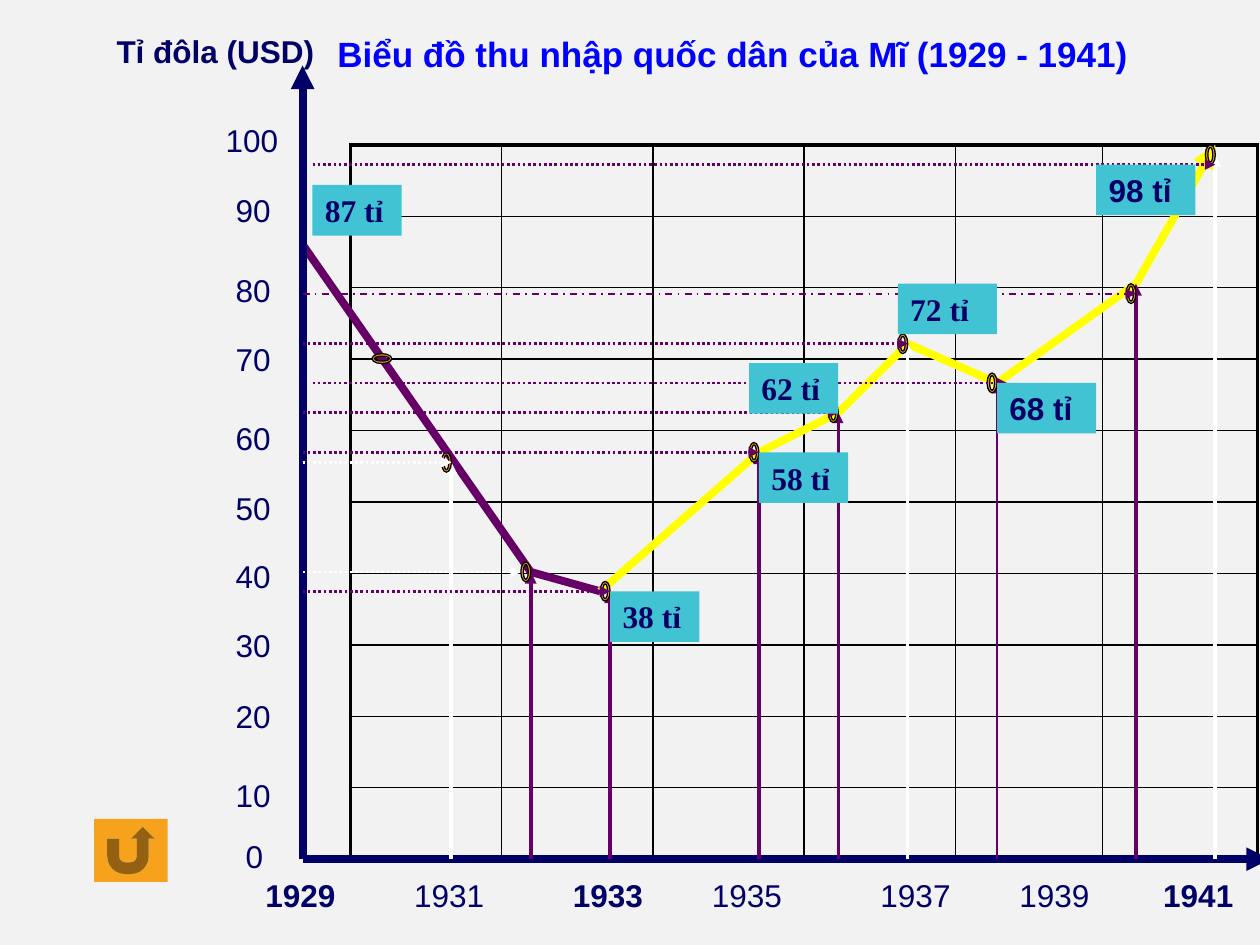
"""Build the slide with the line diagram of United States national income, 1929-1941."""
from itertools import pairwise

from lxml import etree
from pptx import Presentation
from pptx import util as u
from pptx.dml.color import RGBColor
from pptx.enum import dml, shapes, text
from pptx.oxml import ns

NAVY = RGBColor(0x00, 0x00, 0x66)
BLUE = RGBColor(0x00, 0x00, 0xFF)
PURPLE = RGBColor(0x66, 0x00, 0x66)
YELLOW = RGBColor(0xFF, 0xFF, 0x00)
WHITE = RGBColor(0xFF, 0xFF, 0xFF)
BLACK = RGBColor(0x00, 0x00, 0x00)
ORANGE = RGBColor(0xF6, 0xA2, 0x1D)
TEAL = RGBColor(0x42, 0xC3, 0xD4)
PAPER = RGBColor(0xF2, 0xF2, 0xF2)

SERIF = "Times New Roman"
ORIGIN_X, BASE_Y = 6.1, 17.32
LABEL_HEIGHT = 1.02
DOTS = dml.MSO_LINE.ROUND_DOT
DASH_DOT = dml.MSO_LINE.DASH_DOT

INCOME = [(6.1, 4.93), (10.7, 11.53), (12.1, 11.92), (15.3, 9.12), (16.9, 8.32),
          (18.3, 6.93), (20.1, 7.72), (22.9, 5.72), (24.5, 2.92)]
FALLING_PARTS = 2

# x, top of the drop line, colour, width of the drop line
DROPS = [(9.1, 9.32, WHITE, 2.25), (10.7, 11.53, PURPLE, 2.25),
         (12.3, 11.92, PURPLE, 2.25), (15.3, 9.12, PURPLE, 2.25),
         (16.9, 8.32, PURPLE, 1.5), (18.3, 6.93, WHITE, 1.5),
         (20.1, 7.72, PURPLE, 1.5), (22.9, 5.72, PURPLE, 2.25),
         (24.5, 3.12, WHITE, 2.25)]
RING_Y = {22.9: 5.92}

# left, right, y, colour, width, dash
GUIDES = [(6.3, 24.5, 3.32, PURPLE, 1.5, DOTS), (6.1, 18.3, 6.93, PURPLE, 1.5, DOTS),
          (6.1, 16.9, 8.32, PURPLE, 1.5, DOTS), (6.3, 20.3, 7.72, PURPLE, 1.5, DOTS),
          (6.1, 22.9, 5.92, PURPLE, 1, DASH_DOT), (6.1, 15.3, 9.12, PURPLE, 1.5, DOTS),
          (6.1, 9.1, 9.32, WHITE, 1.5, DOTS), (6.1, 10.5, 11.53, WHITE, 1.5, DOTS),
          (6.1, 12.3, 11.92, PURPLE, 1.5, DOTS)]

YEARS = [(1929, 5.1, True), (1931, 8.1, False), (1933, 11.3, True), (1935, 14.1, False),
         (1937, 17.5, False), (1939, 20.3, False), (1941, 23.2, True)]
SCALE_TOPS = [16.74, 15.52, 13.92, 12.5, 11.1, 9.73, 8.33, 6.73, 5.33, 3.73, 2.31]

TAGS = [("38 tỉ", 12.3, 11.92, 1.8, SERIF), ("58 tỉ", 15.3, 9.12, 1.8, SERIF),
        ("62 tỉ", 15.1, 7.32, 1.8, SERIF), ("68 tỉ", 20.1, 7.72, 2, "Arial"),
        ("72 tỉ", 18.1, 5.72, 2, SERIF), ("98 tỉ", 22.1, 3.32, 2, "Arial"),
        ("87 tỉ", 6.3, 3.73, 1.8, SERIF)]


def write(frame, words, *, size=18, font="Arial", color=NAVY, bold=False):
    """Put one left-aligned run of formatted text into a frame."""
    frame.word_wrap = True
    frame.vertical_anchor = text.MSO_ANCHOR.TOP
    paragraph = frame.paragraphs[0]
    paragraph.alignment = text.PP_ALIGN.LEFT
    run = paragraph.add_run()
    run.text = words
    run.font.size = u.Pt(size)
    run.font.name = font
    run.font.bold = bold
    run.font.color.rgb = color


def add_label(slide, words, left, top, width, **style):
    """Add a text box with one line of text."""
    box = slide.shapes.add_textbox(u.Cm(left), u.Cm(top), u.Cm(width), u.Cm(LABEL_HEIGHT))
    write(box.text_frame, words, **style)


def add_line(slide, start, end, color, width, *, arrow=False, dash=None):
    """Add a straight line, with an arrowhead at its end if wanted."""
    connector = slide.shapes.add_connector(
        shapes.MSO_CONNECTOR.STRAIGHT, *(u.Cm(v) for v in (*start, *end)))
    line = connector.line
    line.color.rgb = color
    line.width = u.Pt(width)
    if dash:
        line.dash_style = dash
    if arrow:
        etree.SubElement(line._get_or_add_ln(), ns.qn("a:tailEnd"), type="triangle")
    etree.SubElement(connector._element.spPr, ns.qn("a:effectLst"))


def add_figure(slide, preset, left, top, width, height, fill, *, outline=None):
    """Add a filled preset shape and return it."""
    figure = slide.shapes.add_shape(preset, *(u.Cm(v) for v in (left, top, width, height)))
    figure.shadow.inherit = False
    figure.fill.solid()
    figure.fill.fore_color.rgb = fill
    if outline is None:
        figure.line.fill.background()
    else:
        figure.line.color.rgb = outline
        figure.line.width = u.Pt(0.75)
    return figure


def set_border(cell, side, width):
    """Draw one black border of a table cell."""
    border = etree.SubElement(cell._tc.get_or_add_tcPr(), ns.qn(f"a:{side}"),
                              w=str(int(u.Pt(width))))
    fill = etree.SubElement(border, ns.qn("a:solidFill"))
    etree.SubElement(fill, ns.qn("a:srgbClr"), val=str(BLACK))


def add_grid(slide):
    """Add the empty table behind the diagram, with a heavier outer border."""
    widths, row_count = [3.05, 3.05, 3.05, 3.05, 2.97, 3.12], 10
    height = u.Cm(14.4)
    table = slide.shapes.add_table(row_count, len(widths), u.Cm(7.06), u.Cm(2.92),
                                   u.Cm(sum(widths)), height).table
    table.first_row = table.horz_banding = False
    for column, width in zip(table.columns, widths):
        column.width = u.Cm(width)
    for r, row in enumerate(table.rows):
        row.height = height // row_count
        for c, cell in enumerate(row.cells):
            outer = {"lnL": c == 0, "lnR": c == len(widths) - 1,
                     "lnT": r == 0, "lnB": r == row_count - 1}
            for side, is_outer in outer.items():
                set_border(cell, side, 2.25 if is_outer else 1)
            cell.fill.background()


def add_curve_and_axes(slide):
    """Add the income curve and the two axes."""
    for part, (start, end) in enumerate(pairwise(INCOME)):
        add_line(slide, start, end, PURPLE if part < FALLING_PARTS else YELLOW, 4.5,
                 arrow=end == INCOME[-1])
    for tip in ((ORIGIN_X, 1.32), (25.6, BASE_Y)):
        add_line(slide, (ORIGIN_X, BASE_Y), tip, NAVY, 4.5, arrow=True)


def add_scales(slide):
    """Add the years, the income scale and its unit."""
    for year, left, bold in YEARS:
        add_label(slide, str(year), left, 17.53, 2.2, bold=bold)
    for step, top in enumerate(SCALE_TOPS):
        value = str(step * 10)
        add_label(slide, value, 4.9 - 0.2 * len(value), top, 1.6)
    add_label(slide, "Tỉ đôla (USD)", 2.1, 0.53, 5.8, bold=True)


def add_readings(slide):
    """Add drop lines, ring markers, guides and value tags."""
    for x, top, color, width in DROPS:
        add_line(slide, (x, BASE_Y), (x, top), color, width, arrow=True)
    ring = shapes.MSO_SHAPE.DONUT
    for x, top, _, _ in DROPS:
        add_figure(slide, ring, x - 0.2, RING_Y.get(x, top) - 0.2, 0.2, 0.4, ORANGE,
                   outline=BLACK)
    add_figure(slide, ring, 7.5, 7.13, 0.4, 0.2, ORANGE, outline=BLACK)
    for left, right, y, color, width, dash in GUIDES:
        add_line(slide, (left, y), (right, y), color, width, arrow=True, dash=dash)
    for words, left, top, width, font in TAGS:
        tag = add_figure(slide, shapes.MSO_SHAPE.RECTANGLE, left, top, width,
                         LABEL_HEIGHT, TEAL)
        write(tag.text_frame, words, font=font, bold=True)


def main():
    """Build and save the presentation."""
    deck = Presentation()
    deck.slide_width, deck.slide_height = u.Cm(25.4), u.Cm(19.05)
    slide = deck.slides.add_slide(deck.slide_layouts[6])
    slide.background.fill.solid()
    slide.background.fill.fore_color.rgb = PAPER
    add_grid(slide)
    add_curve_and_axes(slide)
    add_scales(slide)
    add_label(slide, "Biểu đồ thu nhập quốc dân của Mĩ (1929 - 1941)", 6.55, 0.53, 18.85,
              size=20, color=BLUE, bold=True)
    add_readings(slide)
    add_figure(slide, shapes.MSO_SHAPE.ACTION_BUTTON_RETURN, 1.9, 16.51, 1.48, 1.27, ORANGE)
    deck.save("out.pptx")


if __name__ == "__main__":
    main()
